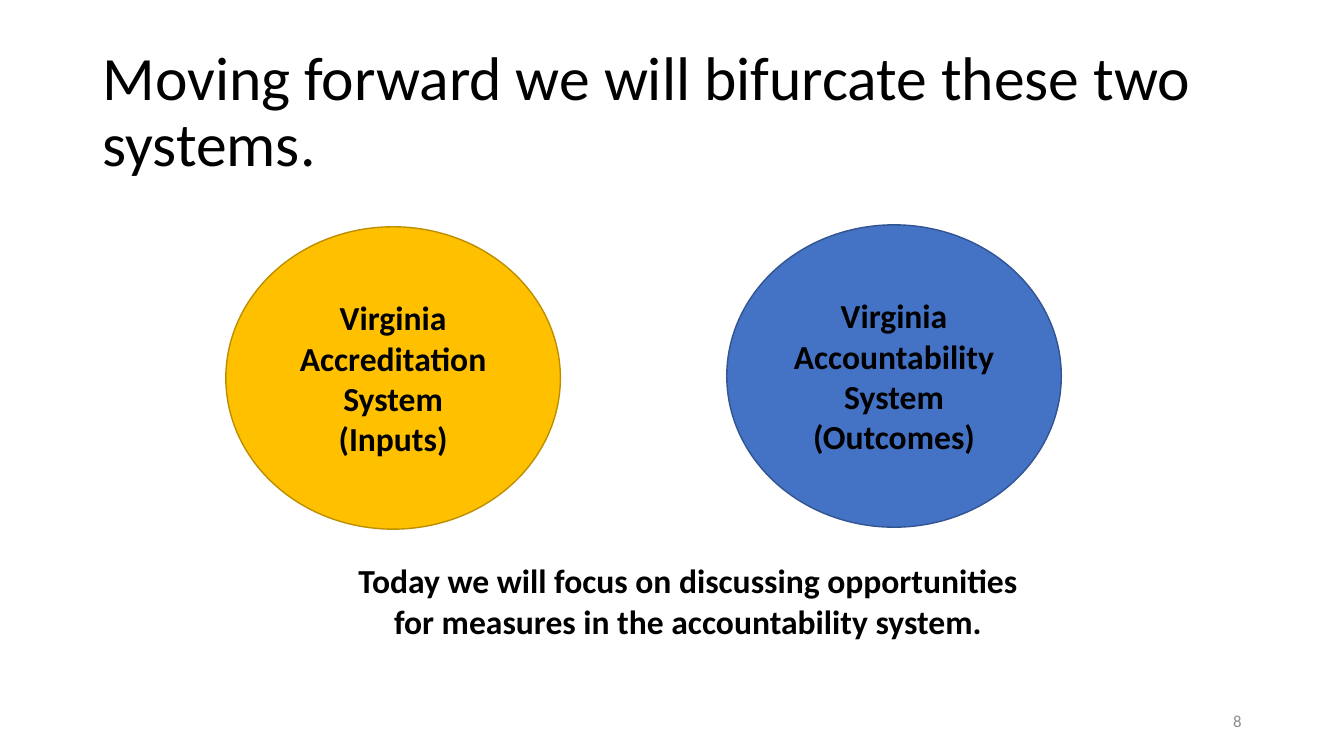
from dataclasses import dataclass

from pptx import Presentation
from pptx.dml.color import RGBColor as Rgb
from pptx.enum.shapes import MSO_SHAPE as Shape
from pptx.enum.text import MSO_ANCHOR as Anchor, MSO_AUTO_SIZE as Fit, PP_ALIGN as Align
from pptx.util import Pt

HUES = {
    "black": "000000",
    "grey": "8C8C8C",
    "gold": "FFC000",
    "bronze": "BD8E00",
    "blue": "4472C4",
    "navy": "325491",
}
BOLD = {"name": "Calibri", "size": Pt(24), "bold": True}
HEAD = {"name": "Calibri", "size": Pt(44), "bold": False}
SMALL = {"name": "Calibri", "size": Pt(12), "bold": False}


@dataclass
class Box:
    left: float
    top: float
    width: float
    height: float

    def edges(self) -> tuple:
        return Pt(self.left), Pt(self.top), Pt(self.width), Pt(self.height)


@dataclass
class System:
    box: Box
    fill: str
    line: str
    lines: list


@dataclass
class Label:
    box: Box
    text: str
    font: dict
    hue: str
    align: Align
    anchor: Anchor


SYSTEMS = [
    System(Box(161.3, 162, 239, 216), "gold", "bronze",
           ["Virginia", "Accreditation System", "(Inputs)"]),
    System(Box(519.1, 160.6, 239, 216), "blue", "navy",
           ["Virginia Accountability System", "(Outcomes)"]),
]
LABELS = [
    Label(Box(241.2, 396.7, 500.4, 65.5),
          "Today we will focus on discussing opportunities "
          "for measures in the accountability system.",
          BOLD, "black", Align.CENTER, Anchor.TOP),
    Label(Box(678, 500.4, 216, 28.8), "8", SMALL, "grey", Align.RIGHT, Anchor.MIDDLE),
]


def color(name: str) -> Rgb:
    return Rgb.from_string(HUES[name])


def write(frame, lines: list, font: dict, hue: str, align: Align, anchor: Anchor) -> None:
    frame.text = "\n".join(lines)
    for key, value in {"word_wrap": True, "auto_size": Fit.NONE,
                       "vertical_anchor": anchor}.items():
        setattr(frame, key, value)
    for para in frame.paragraphs:
        para.alignment = align
        for run in para.runs:
            for key, value in font.items():
                setattr(run.font, key, value)
            run.font.color.rgb = color(hue)


def add_title(slide, box: Box, text: str) -> None:
    title = slide.shapes.title
    title.left, title.top, title.width, title.height = box.edges()
    write(title.text_frame, [text], HEAD, "black", Align.LEFT, Anchor.MIDDLE)
    title.text_frame.paragraphs[0].line_spacing = 0.9


def add_system(slide, item: System) -> None:
    oval = slide.shapes.add_shape(Shape.OVAL, *item.box.edges())
    oval.shadow.inherit = False
    oval.fill.solid()
    oval.fill.fore_color.rgb = color(item.fill)
    oval.line.color.rgb = color(item.line)
    oval.line.width = Pt(1)
    write(oval.text_frame, item.lines, BOLD, "black", Align.CENTER, Anchor.MIDDLE)


def add_label(slide, item: Label) -> None:
    box = slide.shapes.add_textbox(*item.box.edges())
    write(box.text_frame, [item.text], item.font, item.hue, item.align, item.anchor)


def main() -> None:
    deck = Presentation()
    deck.slide_width, deck.slide_height = Pt(960), Pt(540)
    slide = deck.slides.add_slide(deck.slide_layouts.get_by_name("Title Only"))
    add_title(slide, Box(66, 28.8, 828, 104.4),
              "Moving forward we will bifurcate these two systems.")
    for item in SYSTEMS:
        add_system(slide, item)
    for item in LABELS:
        add_label(slide, item)
    deck.save("out.pptx")


if __name__ == "__main__":
    main()
